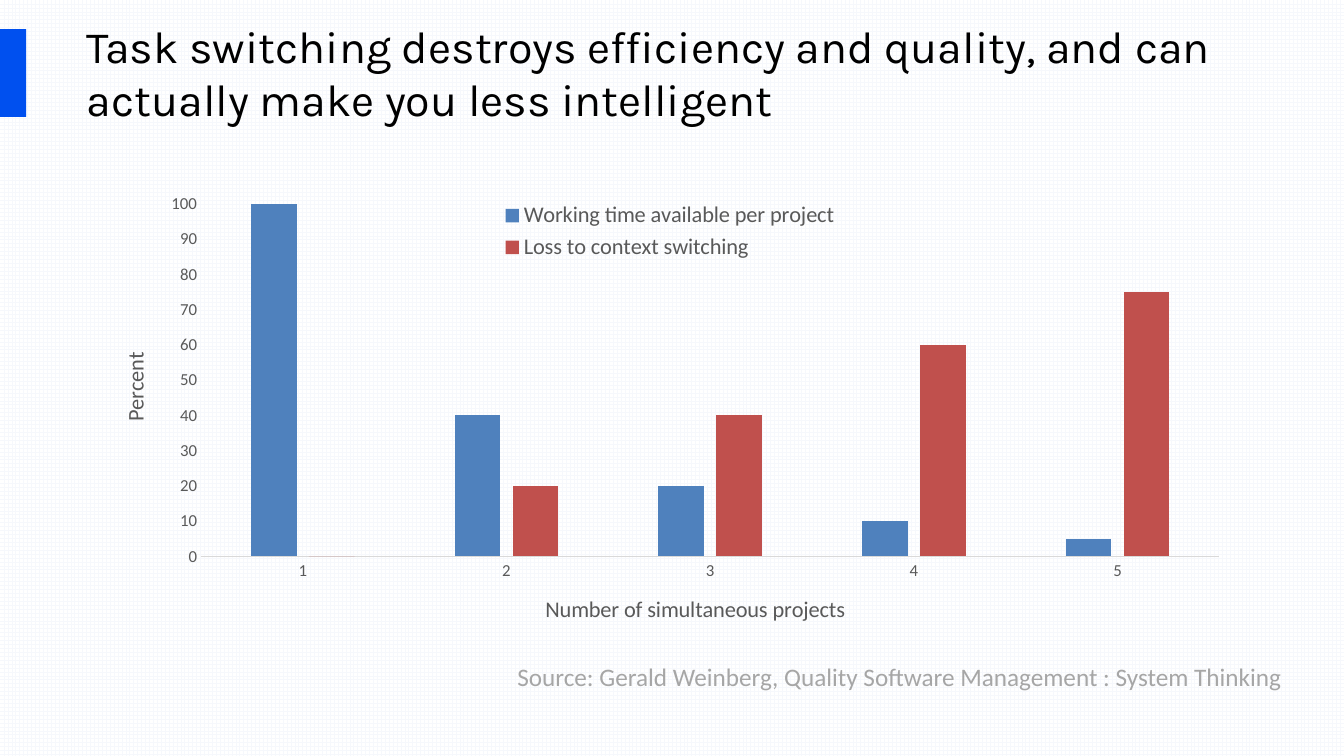
from lxml.etree import SubElement
from pptx import Presentation
from pptx.chart.data import CategoryChartData
from pptx.dml.color import RGBColor
from pptx.enum.chart import XL_CHART_TYPE, XL_LEGEND_POSITION, XL_TICK_MARK
from pptx.enum.dml import MSO_PATTERN
from pptx.enum.shapes import MSO_SHAPE
from pptx.enum.text import MSO_ANCHOR, MSO_AUTO_SIZE, PP_ALIGN
from pptx.oxml import parse_xml
from pptx.oxml.ns import nsdecls, qn
from pptx.util import Inches, Pt


def format_font(font, size, color, name="Calibri"):
    values = {"size": Pt(size), "name": name, "bold": False}
    for attribute, value in values.items():
        setattr(font, attribute, value)
    font.color.rgb = RGBColor.from_string(color)


def set_layout(element, index, values):
    for old_layout in element.findall(qn("c:layout")):
        element.remove(old_layout)
    layout = parse_xml(f"<c:layout {nsdecls('c')}/>")
    manual_layout = SubElement(layout, qn("c:manualLayout"))
    for tag, value in values.items():
        SubElement(manual_layout, qn(f"c:{tag}")).set("val", str(value))
    element.insert(index, layout)


presentation = Presentation()
presentation.slide_width = Inches(13.33)
presentation.slide_height = Inches(7.5)
slide = presentation.slides.add_slide(presentation.slide_layouts[5])

background = slide.background.fill
background.patterned()
background.pattern = MSO_PATTERN.LARGE_GRID
background.fore_color.rgb = RGBColor.from_string("F6F8FC")
background.back_color.rgb = RGBColor.from_string("FFFFFF")

accent = slide.shapes.add_shape(MSO_SHAPE.RECTANGLE, 0, Inches(0.29), Inches(0.26), Inches(0.87))
accent.shadow.inherit = False
accent.fill.solid()
accent.fill.fore_color.rgb = RGBColor.from_string("0050EF")
accent.line.fill.background()

title = slide.shapes.title
title_box = {"left": 0.76, "top": 0.29, "width": 11.92, "height": 0.85}
for attribute, value in title_box.items():
    setattr(title, attribute, Inches(value))
title.text_frame.text = "Task switching destroys efficiency and quality, and can actually make you less intelligent"
title_format = {"word_wrap": True, "auto_size": MSO_AUTO_SIZE.NONE, "vertical_anchor": MSO_ANCHOR.MIDDLE}
for attribute, value in title_format.items():
    setattr(title.text_frame, attribute, value)
paragraph = title.text_frame.paragraphs[0]
paragraph.alignment = PP_ALIGN.LEFT
format_font(paragraph.runs[0].font, 32, "000000", "Karla")

chart_data = CategoryChartData()
chart_data.categories = ["1", "2", "3", "4", "5"]
chart_data.add_series("Working time available per project", [100, 40, 20, 10, 5])
chart_data.add_series("Loss to context switching", [0, 20, 40, 60, 75])
chart = slide.shapes.add_chart(
    XL_CHART_TYPE.COLUMN_CLUSTERED, Inches(1.15), Inches(1.78), Inches(11.1), Inches(4.49), chart_data
).chart
chart.has_title = False
format_font(chart.font, 10, "000000")

plot = chart.plots[0]
plot_format = {"gap_width": 219, "overlap": -27, "vary_by_categories": False}
for attribute, value in plot_format.items():
    setattr(plot, attribute, value)
for series, color in zip(plot.series, ["4F81BD", "C0504D"]):
    series.format.fill.solid()
    series.format.fill.fore_color.rgb = RGBColor.from_string(color)

axis_titles = [
    (chart.category_axis, "Number of simultaneous projects"),
    (chart.value_axis, "Percent"),
]
for axis, text in axis_titles:
    axis_format = {
        "has_major_gridlines": False,
        "major_tick_mark": XL_TICK_MARK.NONE,
        "minor_tick_mark": XL_TICK_MARK.NONE,
    }
    for attribute, value in axis_format.items():
        setattr(axis, attribute, value)
    format_font(axis.tick_labels.font, 12, "595959")
    axis.axis_title.text_frame.text = text
    format_font(axis.axis_title.text_frame.paragraphs[0].runs[0].font, 16, "595959")

category_line = chart.category_axis.format.line
category_line.color.rgb = RGBColor.from_string("D9D9D9")
category_line.width = Pt(0.75)
chart.value_axis.format.line.fill.background()
value_scale = {"minimum_scale": 0, "maximum_scale": 100, "major_unit": 10}
for attribute, value in value_scale.items():
    setattr(chart.value_axis, attribute, value)

chart.has_legend = True
legend = chart.legend
legend.position = XL_LEGEND_POSITION.TOP
legend.include_in_layout = False
format_font(legend.font, 16, "595959")

edges = {"xMode": "edge", "yMode": "edge"}
plot_area = chart.element.find(f".//{qn('c:plotArea')}")
set_layout(plot_area, 0, {"layoutTarget": "inner", **edges, "x": 0.076, "y": 0.054, "w": 0.91, "h": 0.779})
legend_element = chart.element.find(f".//{qn('c:legend')}")
set_layout(legend_element, 1, {**edges, "x": 0.34, "y": 0.04, "w": 0.31, "h": 0.15})

source = slide.shapes.add_textbox(Inches(4.54), Inches(6.51), Inches(8.27), Inches(0.4))
source.text_frame.word_wrap = True
source.text_frame.auto_size = MSO_AUTO_SIZE.SHAPE_TO_FIT_TEXT
source.text_frame.text = "Source: Gerald Weinberg, Quality Software Management : System Thinking"
paragraph = source.text_frame.paragraphs[0]
paragraph.alignment = PP_ALIGN.RIGHT
format_font(paragraph.runs[0].font, 18, "A6A6A6")

presentation.save("out.pptx")
